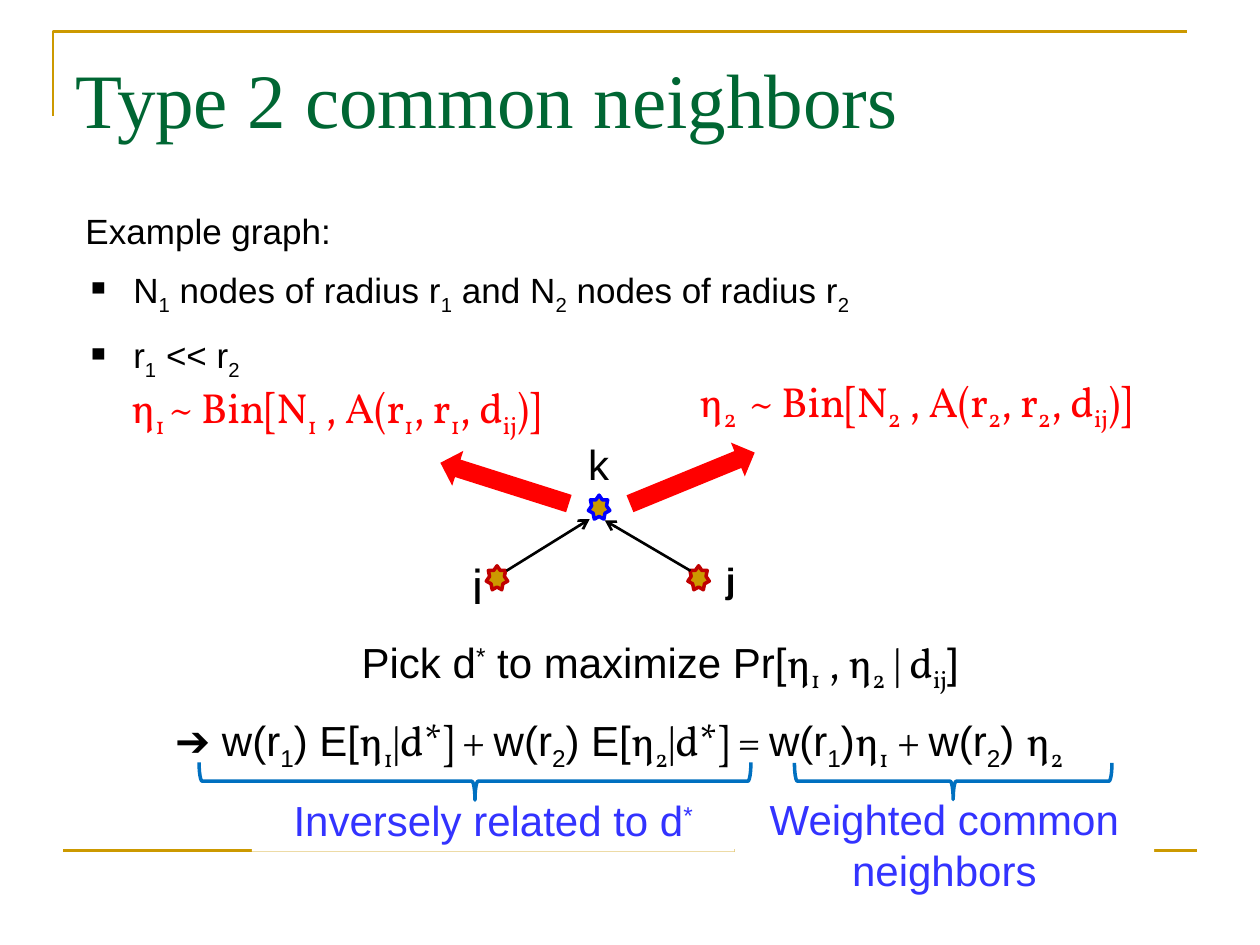
import pptx
import pptx.util
import pptx.dml.color
import pptx.enum.shapes
import pptx.enum.text
import pptx.oxml
import pptx.oxml.ns
from dataclasses import dataclass

Inches = pptx.util.Inches
Shapes = pptx.enum.shapes.MSO_SHAPE
Align = pptx.enum.text.PP_ALIGN


@dataclass(frozen=True)
class Theme:
    body: str = "Arial"
    math: str = "Vollkorn"
    title: str = "Times New Roman"
    gold: str = "CC9900"
    green: str = "006633"
    black: str = "000000"
    white: str = "FFFFFF"
    red: str = "FF0000"
    dark_red: str = "C00000"
    blue: str = "0000FF"
    note_blue: str = "3333FF"
    brace_blue: str = "0070C0"
    title_size: int = 44
    large: int = 28
    medium: int = 24
    small: int = 20


THEME = Theme()
BODY, MATH = THEME.body, THEME.math
LEVELS = {"_": -25, "^": 30}

# A paragraph is a list of (font, text); _..._ is subscript, ^...^ superscript.
TITLE = [[(THEME.title, "Type 2 common neighbors")]]
EXAMPLE = [
    [(BODY, "Example graph:")],
    [(BODY, "N_1_ nodes of radius r_1_ and N_2_ nodes of radius r_2_")],
    [(BODY, "r_1_ << r_2_")],
]
OBJECTIVE = [
    [(BODY, "Pick d^*^ to maximize Pr["), (MATH, "η_1_ , η_2_ | d_ij_"), (BODY, "]")],
    [(BODY, "➔ w(r_1_) E["), (MATH, "η_1_|d*] + "), (BODY, "w(r_2_) E["),
     (MATH, "η_2_|d*] = "), (BODY, "w(r_1_)"), (MATH, "η_1_ + "),
     (BODY, "w(r_2_) "), (MATH, "η_2_")],
]
DISTRIBUTIONS = [  # text, text box, arrow box, arrow rotation
    ("η_1 _~ Bin[N_1_ , A(r_1_, r_1_, d_ij_)]", (0.59, 2.98, 4.15, 0.5),
     (3.47, 3.69, 1.07, 0.29), 17.6),
    ("η_2 _ ~ Bin[N_2_ , A(r_2_, r_2_, d_ij_)]", (5.19, 2.93, 4.15, 0.5),
     (4.96, 3.65, 1.07, 0.29), 157.7),
]
NODE_SIZE = (0.17, 0.19)
NODES = [  # label, label box, size, bold, star corner, outline
    ("i", (3.62, 4.36, 0.34, 0.57), THEME.large, False, (3.86, 4.49), THEME.dark_red),
    ("j", (5.63, 4.38, 0.34, 0.44), THEME.small, True, (5.46, 4.49), THEME.dark_red),
    ("k", (4.57, 3.43, 0.34, 0.5), THEME.medium, False, (4.67, 3.93), THEME.blue),
]
EDGES = [(4.02, 4.53, 4.68, 4.12), (5.48, 4.53, 4.8, 4.13)]
NOTES = [  # text, box, brace box
    ("Weighted common neighbors", (5.83, 6.25, 3.33, 0.91), (7.42, 4.94, 0.29, 2.52)),
    ("Inversely related to d^*^", (2, 6.26, 3.83, 0.5), (3.62, 4.01, 0.3, 4.38)),
]


def color(value):
    return pptx.dml.color.RGBColor.from_string(value)


def split_levels(text):
    """Yield (text, baseline) pieces of marked-up text."""
    piece, level = "", 0
    for character in text:
        if character in LEVELS:
            if piece:
                yield piece, level
            piece, level = "", 0 if level else LEVELS[character]
        else:
            piece += character
    if piece:
        yield piece, level


def space_before_half_line(paragraph):
    paragraph.space_before = pptx.util.Pt(10)
    spacing = paragraph._p.get_or_add_pPr().find(pptx.oxml.ns.qn("a:spcBef"))
    spacing.remove(spacing[0])
    spacing.append(pptx.oxml.parse_xml(
        f'<a:spcPct {pptx.oxml.ns.nsdecls("a")} val="50000"/>'))


def indent(paragraph, left, first=0, bullet=None):
    properties = paragraph._p.get_or_add_pPr()
    properties.set("marL", str(Inches(left)))
    properties.set("indent", str(Inches(first)))
    if bullet:
        properties.append(pptx.oxml.parse_xml(
            f'<a:buChar {pptx.oxml.ns.nsdecls("a")} char="{bullet}"/>'))


def write(shape, paragraphs, size, ink=THEME.black, align=Align.CENTER, bold=False, grow=True):
    frame = shape.text_frame
    frame.word_wrap = True
    frame.vertical_anchor = pptx.enum.text.MSO_ANCHOR.TOP
    if grow:
        frame.auto_size = pptx.enum.text.MSO_AUTO_SIZE.SHAPE_TO_FIT_TEXT
    for index, segments in enumerate(paragraphs):
        paragraph = frame.add_paragraph() if index else frame.paragraphs[0]
        paragraph.alignment = align
        space_before_half_line(paragraph)
        for font, text in segments:
            for piece, level in split_levels(text):
                run = paragraph.add_run()
                run.text = piece
                run.font.name = font
                run.font.size = pptx.util.Pt(size)
                run.font.bold = bold
                run.font.color.rgb = color(ink)
                if level:
                    run.font._element.set("baseline", str(level * 1000))
    return frame


def add_text(slide, box, paragraphs, size, **style):
    return write(slide.shapes.add_textbox(*map(Inches, box)), paragraphs, size, **style)


def paint(shape, fill=None, line=None, width=2):
    shape.shadow.inherit = False
    if fill:
        shape.fill.solid()
        shape.fill.fore_color.rgb = color(fill)
    else:
        shape.fill.background()
    if line:
        shape.line.color.rgb = color(line)
        shape.line.width = pptx.util.Pt(width)
    else:
        shape.line.fill.background()


def add_shape(slide, kind, box, fill=None, line=None, rotation=0):
    shape = slide.shapes.add_shape(kind, *map(Inches, box))
    paint(shape, fill, line)
    shape.rotation = rotation
    return shape


def add_line(slide, ends, ink, arrow=False):
    line = slide.shapes.add_connector(
        pptx.enum.shapes.MSO_CONNECTOR.STRAIGHT, *map(Inches, ends))
    line.line.color.rgb = color(ink)
    line.line.width = pptx.util.Pt(1.5)
    namespace = pptx.oxml.ns.nsdecls("a")
    if arrow:
        line.line._get_or_add_ln().append(
            pptx.oxml.parse_xml(f'<a:tailEnd {namespace} type="arrow"/>'))
    line._element.spPr.append(pptx.oxml.parse_xml(f"<a:effectLst {namespace}/>"))


def add_frame_and_title(slide):
    builder = slide.shapes.build_freeform(Inches(0.42), Inches(0.92))
    builder.add_line_segments(
        [(Inches(0.42), Inches(0.25)), (Inches(9.42), Inches(0.25))], close=False)
    paint(builder.convert_to_shape(), line=THEME.gold, width=1.5)
    add_line(slide, (0.5, 6.75, 9.5, 6.75), THEME.gold)
    frame = add_text(slide, (0.5, 0.3, 9, 1.25), TITLE, THEME.title_size,
                     ink=THEME.green, align=Align.LEFT, grow=False)
    frame.margin_top = Inches(0.11)


def add_graph(slide):
    for label, box, size, bold, corner, outline in NODES:
        add_text(slide, box, [[(BODY, label)]], size, bold=bold)
        add_shape(slide, Shapes.STAR_7_POINT, corner + NODE_SIZE, THEME.gold, outline)
    for ends in EDGES:
        add_line(slide, ends, THEME.black, arrow=True)
    for text, box, arrow_box, rotation in DISTRIBUTIONS:
        add_shape(slide, Shapes.LEFT_ARROW, arrow_box, THEME.red, rotation=rotation)
        add_text(slide, box, [[(MATH, text)]], THEME.medium, ink=THEME.red)


def add_statements(slide):
    frame = add_text(slide, (0.58, 1.61, 8.62, 1.45), EXAMPLE, THEME.small, align=Align.LEFT)
    for paragraph in frame.paragraphs[1:]:
        indent(paragraph, 0.38, -0.38, "▪")
    frame = add_text(slide, (0.58, 5, 8.67, 1.11), OBJECTIVE, THEME.medium)
    indent(frame.paragraphs[0], 0.65)
    for text, box, brace_box in NOTES:
        note = add_shape(slide, Shapes.RECTANGLE, box, THEME.white)
        write(note, [[(BODY, text)]], THEME.medium, ink=THEME.note_blue)
        add_shape(slide, Shapes.LEFT_BRACE, brace_box, line=THEME.brace_blue, rotation=270)


def main():
    presentation = pptx.Presentation()
    presentation.slide_width, presentation.slide_height = Inches(10), Inches(7.5)
    slide = presentation.slides.add_slide(presentation.slide_layouts[6])
    add_frame_and_title(slide)
    add_graph(slide)
    add_statements(slide)
    presentation.save("out.pptx")


if __name__ == "__main__":
    main()
